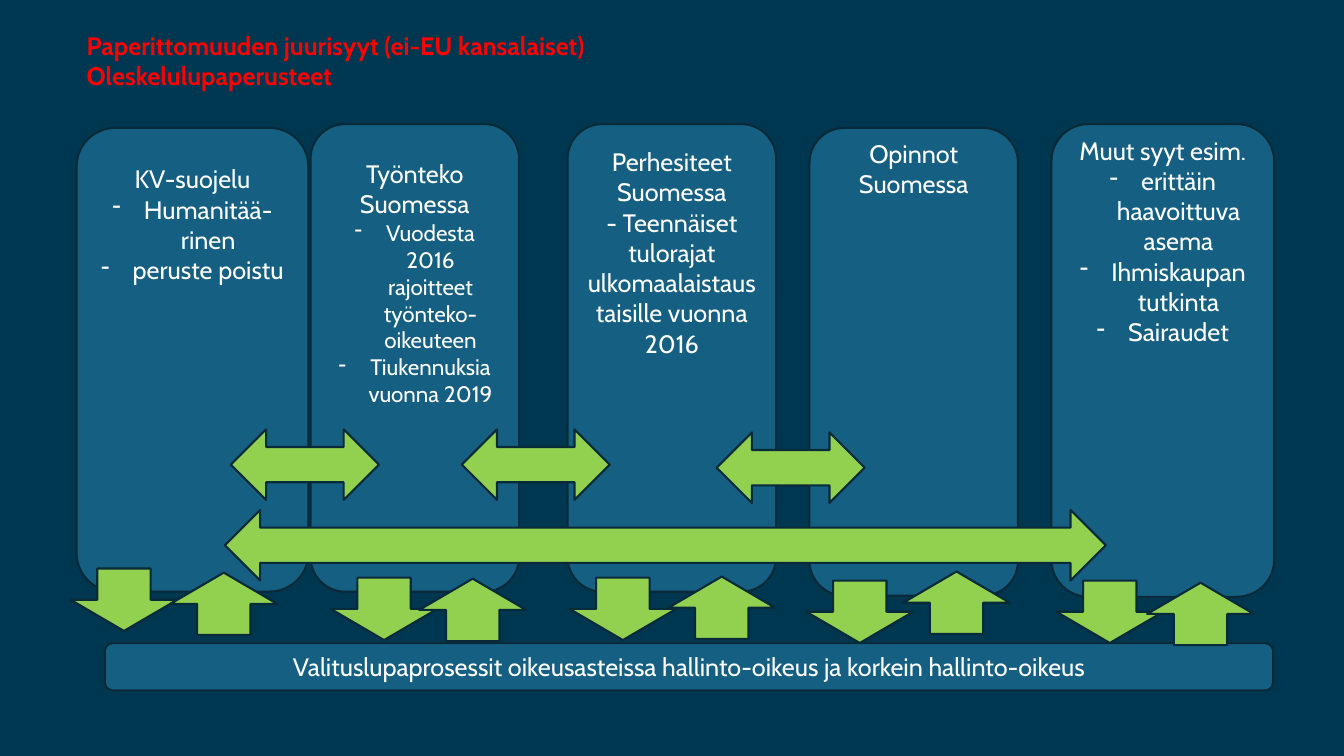
import pptx
import pptx.util
import pptx.dml.color
import pptx.enum.shapes
import pptx.enum.text
import pptx.oxml.ns
import lxml.etree

Pt = pptx.util.Pt
RGB = pptx.dml.color.RGBColor
Kind = pptx.enum.shapes.MSO_SHAPE
Text = pptx.enum.text

HUES = {"back": "003750", "card": "156082", "edge": "092A39",
        "arrow": "92D050", "title": "FF0000", "text": "FFFFFF"}

CARDS = [
    ((54.7, 91.4, 165.6, 331.2), 17.4,
     [("KV-suojelu", 18, False), ("Humanitää-rinen", 18, True), ("peruste poistu", 18, True)]),
    ((221.8, 88.6, 149, 334.1), 17.4,
     [("Työnteko Suomessa", 18, False),
      ("Vuodesta 2016 rajoitteet työnteko-oikeuteen", 16, True),
      ("Tiukennuksia vuonna 2019", 16, True)]),
    ((405.4, 88.6, 149, 334.1), 8.8,
     [("Perhesiteet", 18, False), ("Suomessa", 18, False),
      ("- Teennäiset tulorajat ulkomaalaistaustaisille vuonna 2016", 18, False)]),
    ((578.2, 91.4, 149, 334.1), 0, [("Opinnot Suomessa", 18, False)]),
    ((751, 88.6, 159.1, 337.7), 0,
     [("Muut syyt esim.", 18, False), ("erittäin haavoittuva asema", 18, True),
      ("Ihmiskaupan tutkinta", 18, True), ("Sairaudet", 18, True)]),
]
LINKS = [(164.9, 306.7, 105.8), (329.8, 306.7, 105.8),
         (511.9, 308.9, 105.8), (160.6, 364.3, 629.3)]
DOWNS = [(50.4, 406.1), (236.2, 412.6), (406.8, 412.6), (576, 414.7), (754.6, 414.7)]
UPS = [(121.7, 409), (299.5, 413.3), (477.4, 411.8), (645.1, 408.2), (819.4, 416.2)]


class Board:
    """Draws styled elements on one slide, with lengths in points."""

    def __init__(self, deck, font="Cabin"):
        self.font = font
        self.slide = deck.slides.add_slide(deck.slide_layouts[5])
        fill = self.slide.background.fill
        fill.solid()
        fill.fore_color.rgb = self.hue("back")

    def hue(self, name):
        return RGB.from_string(HUES[name])

    def line(self, par, text, size, hue, align, bold=False):
        par.text = text
        par.alignment = align
        for run in par.runs:
            run.font.name = self.font
            run.font.size = Pt(size)
            run.font.bold = bold
            run.font.color.rgb = self.hue(hue)

    def title(self, box, lines):
        shape = self.slide.shapes.title
        shape.left, shape.top, shape.width, shape.height = map(Pt, box)
        frame = shape.text_frame
        frame.text = "\n".join(lines)
        frame.word_wrap = True
        frame.auto_size = Text.MSO_AUTO_SIZE.NONE
        frame.vertical_anchor = Text.MSO_ANCHOR.TOP
        for par, text in zip(frame.paragraphs, lines):
            self.line(par, text, 18, "title", Text.PP_ALIGN.LEFT, True)

    def shape(self, kind, box, hue):
        shape = self.slide.shapes.add_shape(kind, *map(Pt, box))
        shape.shadow.inherit = False
        shape.fill.solid()
        shape.fill.fore_color.rgb = self.hue(hue)
        shape.line.color.rgb = self.hue("edge")
        shape.line.width = Pt(1.5)
        return shape

    def dash(self, par):
        props = par._p.get_or_add_pPr()
        props.set("marL", str(Pt(22.5)))
        props.set("indent", str(-Pt(22.5)))
        mark = lxml.etree.SubElement(props, pptx.oxml.ns.qn("a:buChar"))
        mark.set("char", "-")

    def card(self, box, lines, inset=3.6, anchor=Text.MSO_ANCHOR.TOP):
        frame = self.shape(Kind.ROUNDED_RECTANGLE, box, "card").text_frame
        frame.text = "\n".join(text for text, size, listed in lines)
        frame.word_wrap = True
        frame.margin_top = Pt(inset)
        frame.vertical_anchor = anchor
        for par, (text, size, listed) in zip(frame.paragraphs, lines):
            self.line(par, text, size, "text", Text.PP_ALIGN.CENTER)
            if listed:
                self.dash(par)

    def link(self, left, top, width):
        self.shape(Kind.LEFT_RIGHT_ARROW, (left, top, width, 50.4), "arrow")

    def arrow(self, left, top, turn=0):
        shape = self.shape(Kind.DOWN_ARROW, (left, top, 76.3, 44.6), "arrow")
        shape.rotation = turn


def main():
    deck = pptx.Presentation()
    deck.slide_width, deck.slide_height = Pt(960), Pt(540)
    board = Board(deck)
    board.title((54.7, 18, 410, 51.1),
                ["Paperittomuuden juurisyyt (ei-EU kansalaiset)", "Oleskelulupaperusteet"])
    for box, inset, lines in CARDS:
        board.card(box, lines, inset)
    for spot in LINKS:
        board.link(*spot)
    for spot in DOWNS:
        board.arrow(*spot)
    board.card((74.9, 459.4, 834.5, 33.8),
               [("Valituslupaprosessit oikeusasteissa hallinto-oikeus ja korkein hallinto-oikeus",
                 18, False)], anchor=Text.MSO_ANCHOR.MIDDLE)
    for spot in UPS:
        board.arrow(*spot, turn=180)
    deck.save("out.pptx")


if __name__ == "__main__":
    main()
